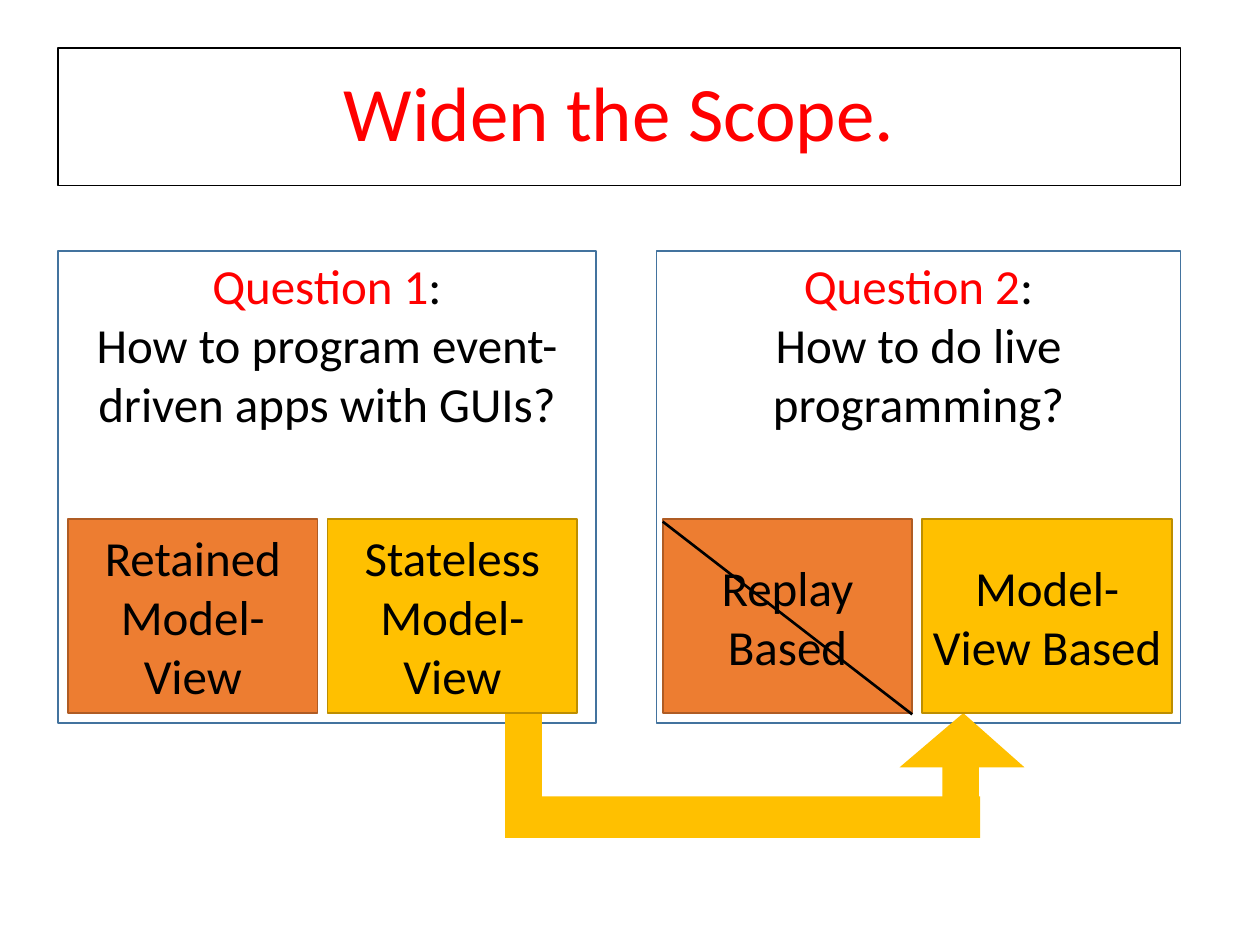
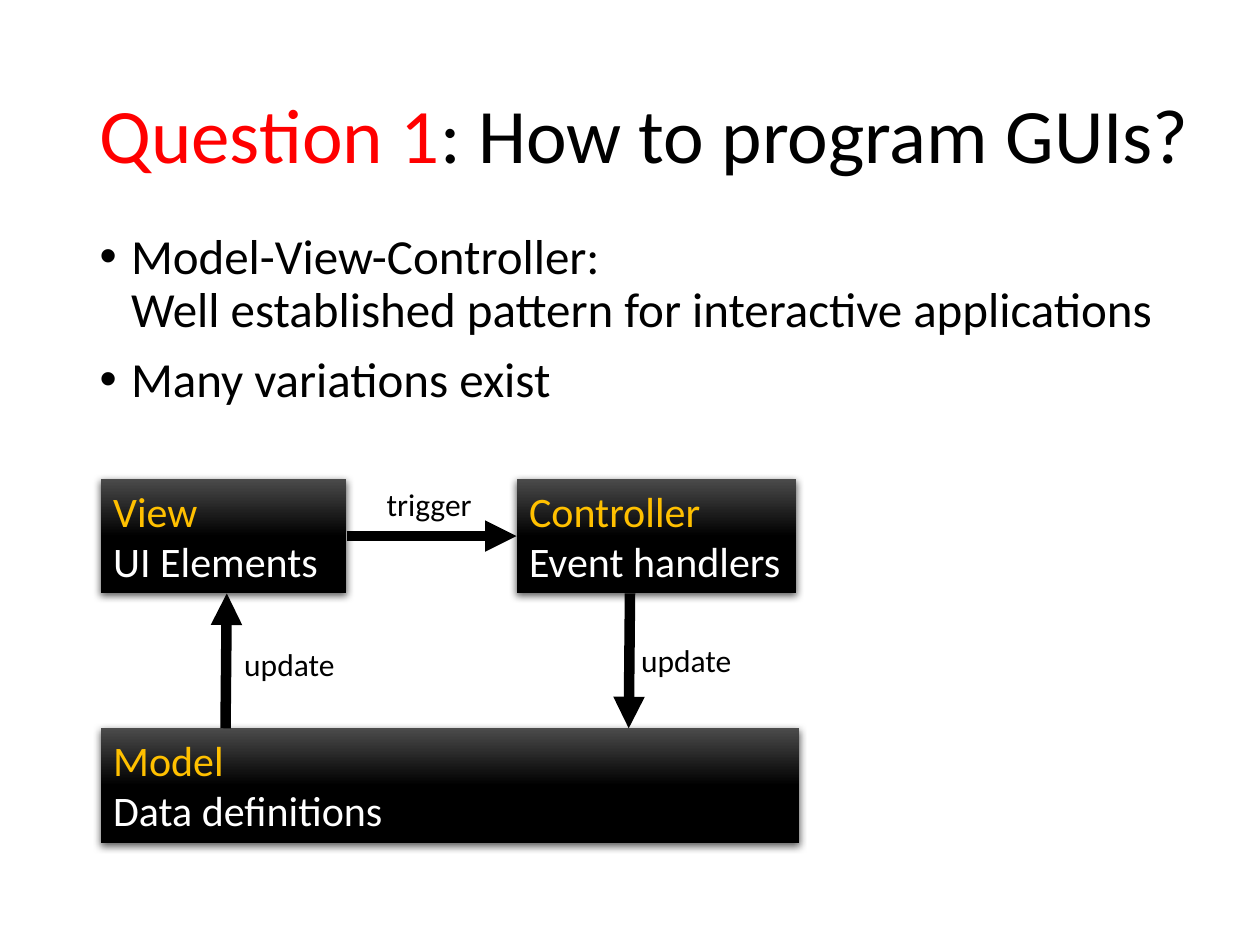
import copy

import lxml.etree
import pptx
import pptx.dml.color
import pptx.enum.shapes
import pptx.enum.text
import pptx.oxml.ns
import pptx.util

Inches = pptx.util.Inches
Pt = pptx.util.Pt
RGBColor = pptx.dml.color.RGBColor
Shape = pptx.enum.shapes.MSO_SHAPE
Align = pptx.enum.text.PP_ALIGN
Anchor = pptx.enum.text.MSO_ANCHOR
qn = pptx.oxml.ns.qn

FONT = "Calibri"
RED = RGBColor(0xFF, 0x00, 0x00)
BLACK = RGBColor(0x00, 0x00, 0x00)
WHITE = RGBColor(0xFF, 0xFF, 0xFF)
GRAY = RGBColor(0x4B, 0x4B, 0x4B)
BLUE = RGBColor(0x43, 0x73, 0x9E)
ORANGE = RGBColor(0xED, 0x7D, 0x31)
RUST = RGBColor(0xAF, 0x5C, 0x24)
GOLD = RGBColor(0xFF, 0xC0, 0x00)
OCHRE = RGBColor(0xBD, 0x8E, 0x00)

SCOPE_TITLE = [[("Widen the Scope.", RED)]]
QUESTIONS = [
    {"name": "Question 1", "text": "How to program event-driven apps with GUIs?",
     "left": 0.46, "width": 4.27, "tiles_left": 0.54,
     "tiles": ["Retained Model-View", "Stateless\nModel-View"]},
    {"name": "Question 2", "text": "How to do live programming?",
     "left": 5.21, "width": 4.16, "tiles_left": 5.26,
     "tiles": ["Replay\nBased", "Model-View Based"]},
]
PANEL_TOP, PANEL_HEIGHT = 1.99, 3.75
TILE_TOP, TILE_WIDTH, TILE_HEIGHT, TILE_STEP = 4.12, 1.98, 1.54, 2.06
TILE_COLOURS = [(ORANGE, RUST), (GOLD, OCHRE)]
BENT_ARROW = [
    (Shape.RECTANGLE, (4.01, 5.23, 0.29, 1.26)),
    (Shape.RECTANGLE, (7.48, 5.96, 0.29, 0.69)),
    (Shape.RECTANGLE, (4.01, 6.32, 3.77, 0.33)),
    (Shape.ISOSCELES_TRIANGLE, (7.14, 5.66, 0.99, 0.43)),
]

PATTERN_TITLE = [[("Question 1", RED), (": How to program GUIs?", BLACK)]]
PATTERN_POINTS = [
    [("Model-View-Controller:\nWell established pattern for interactive applications", BLACK)],
    [("Many variations exist", BLACK)],
]
PARTS = [
    ("Model", "Data definitions", (0.8, 5.78, 5.54, 0.91)),
    ("View", "UI Elements", (0.8, 3.8, 1.95, 0.91)),
    ("Controller", "Event handlers", (4.1, 3.8, 2.22, 0.91)),
]
ARROWS = [
    ((1.79, 5.78), (1.8, 4.71)),
    ((5, 4.71), (4.99, 5.78)),
    ((2.75, 4.25), (4.1, 4.25)),
]
ARROW_LABELS = [
    ("update", (4.99, 5.04, 0.93, 0.4)),
    ("update", (1.84, 5.07, 0.93, 0.4)),
    ("trigger", (2.97, 3.8, 0.88, 0.4)),
]


def write(frame, paragraphs, size, align=Align.LEFT, spacing=None):
    for index, pieces in enumerate(paragraphs):
        para = frame.add_paragraph() if index else frame.paragraphs[0]
        para.alignment = align
        para.line_spacing = spacing
        for place, (text, colour) in enumerate(pieces):
            if place:
                para.add_run().text = text
            else:
                para.text = text
            for span in para.runs[place:]:
                span.font.name = FONT
                span.font.size = Pt(size)
                span.font.color.rgb = colour


def set_place(item, at):
    item.left, item.top, item.width, item.height = map(Inches, at)


def add_box(page, kind, at, fill=None, line=None):
    box = page.shapes.add_shape(kind, *map(Inches, at))
    box.shadow.inherit = False
    if fill is None:
        box.fill.background()
    else:
        box.fill.solid()
        box.fill.fore_color.rgb = fill
    if line is None:
        box.line.fill.background()
    else:
        box.line.color.rgb = line
        box.line.width = Pt(1)
    return box


def write_box(box, paragraphs, anchor):
    frame = box.text_frame
    frame.word_wrap = True
    frame.vertical_anchor = anchor
    frame.margin_left = frame.margin_right = Inches(0.07)
    frame.margin_top = frame.margin_bottom = Inches(0.04)
    write(frame, paragraphs, 28, Align.CENTER)


def add_line(page, start, end, width, arrow=False):
    line = page.shapes.add_connector(
        pptx.enum.shapes.MSO_CONNECTOR.STRAIGHT, *map(Inches, start + end))
    line.line.color.rgb = BLACK
    line.line.width = Pt(width)
    if arrow:
        outline = line.line._get_or_add_ln()
        lxml.etree.SubElement(outline, qn("a:tailEnd"), type="triangle")
    lxml.etree.SubElement(line._element.spPr, qn("a:effectLst"))
    return line


def set_title(page, at, paragraphs, align, anchor):
    title = page.shapes.title
    set_place(title, at)
    frame = title.text_frame
    frame.auto_size = pptx.enum.text.MSO_AUTO_SIZE.NONE
    frame.vertical_anchor = anchor
    write(frame, paragraphs, 44, align, 0.9)
    return title


def add_part(page, name, detail, at):
    box = add_box(page, Shape.RECTANGLE, at)
    box.fill.gradient()
    box.fill.gradient_angle = 270
    stops = box._element.spPr.find(".//" + qn("a:gsLst"))
    stops.append(copy.deepcopy(stops[-1]))
    for stop, position, colour in zip(box.fill.gradient_stops, (0, 0.5, 1), (GRAY, BLACK, BLACK)):
        stop.position = position
        stop.color.rgb = colour
    effects = box._element.spPr.find(qn("a:effectLst"))
    shadow = lxml.etree.SubElement(
        effects, qn("a:outerShdw"), blurRad=str(Pt(4.5)), dist=str(Pt(1.5)),
        dir="5400000", algn="ctr", rotWithShape="0")
    shade = lxml.etree.SubElement(shadow, qn("a:srgbClr"), val=str(BLACK))
    lxml.etree.SubElement(shade, qn("a:alpha"), val="63000")
    box.text_frame.word_wrap = True
    box.text_frame.vertical_anchor = Anchor.TOP
    write(box.text_frame, [[(name, GOLD)], [(detail, WHITE)]], 24)
    return box


def build_scope(deck):
    page = deck.slides.add_slide(deck.slide_layouts[5])
    title = set_title(page, (0.46, 0.38, 8.91, 1.09), SCOPE_TITLE, Align.CENTER, Anchor.MIDDLE)
    title.line.color.rgb = BLACK
    title.line.width = Pt(0.75)
    for question in QUESTIONS:
        panel = add_box(page, Shape.RECTANGLE,
                        (question["left"], PANEL_TOP, question["width"], PANEL_HEIGHT), line=BLUE)
        write_box(panel, [[(question["name"], RED), (":", BLACK)],
                          [(question["text"], BLACK)]], Anchor.TOP)
    for kind, at in BENT_ARROW:
        piece = add_box(page, kind, at, GOLD)
        if kind == Shape.ISOSCELES_TRIANGLE:
            piece.adjustments[0] = 0.51
    for question in QUESTIONS:
        for index, (text, (fill, line)) in enumerate(zip(question["tiles"], TILE_COLOURS)):
            left = question["tiles_left"] + index * TILE_STEP
            tile = add_box(page, Shape.RECTANGLE, (left, TILE_TOP, TILE_WIDTH, TILE_HEIGHT), fill, line)
            write_box(tile, [[(text, BLACK)]], Anchor.MIDDLE)
    add_line(page, (5.26, 4.14), (7.24, 5.67), 1.5)


def build_pattern(deck):
    page = deck.slides.add_slide(deck.slide_layouts[1])
    title = set_title(page, (0.69, 0.55, 9.11, 1.77), PATTERN_TITLE, Align.LEFT, Anchor.TOP)
    title.text_frame.margin_top = Inches(0.22)
    body = page.placeholders[1]
    set_place(body, (0.69, 1.79, 8.62, 1.55))
    body.text_frame.auto_size = pptx.enum.text.MSO_AUTO_SIZE.NONE
    write(body.text_frame, PATTERN_POINTS, 28, spacing=0.9)
    for para in body.text_frame.paragraphs:
        para.space_before = Pt(10)
        settings = para._p.get_or_add_pPr()
        settings.set("marL", str(Inches(0.25)))
        settings.set("indent", str(-Inches(0.25)))
    parts = {name: add_part(page, name, detail, at) for name, detail, at in PARTS}
    arrows = [add_line(page, start, end, 6, True) for start, end in ARROWS]
    arrows[-1].begin_connect(parts["View"], 3)
    arrows[-1].end_connect(parts["Controller"], 1)
    for text, at in ARROW_LABELS:
        label = page.shapes.add_textbox(*map(Inches, at))
        label.text_frame.word_wrap = False
        write(label.text_frame, [[(text, BLACK)]], 18)


def main():
    deck = pptx.Presentation()
    deck.slide_width, deck.slide_height = Inches(10), Inches(7.5)
    build_scope(deck)
    build_pattern(deck)
    deck.save("out.pptx")


if __name__ == "__main__":
    main()
